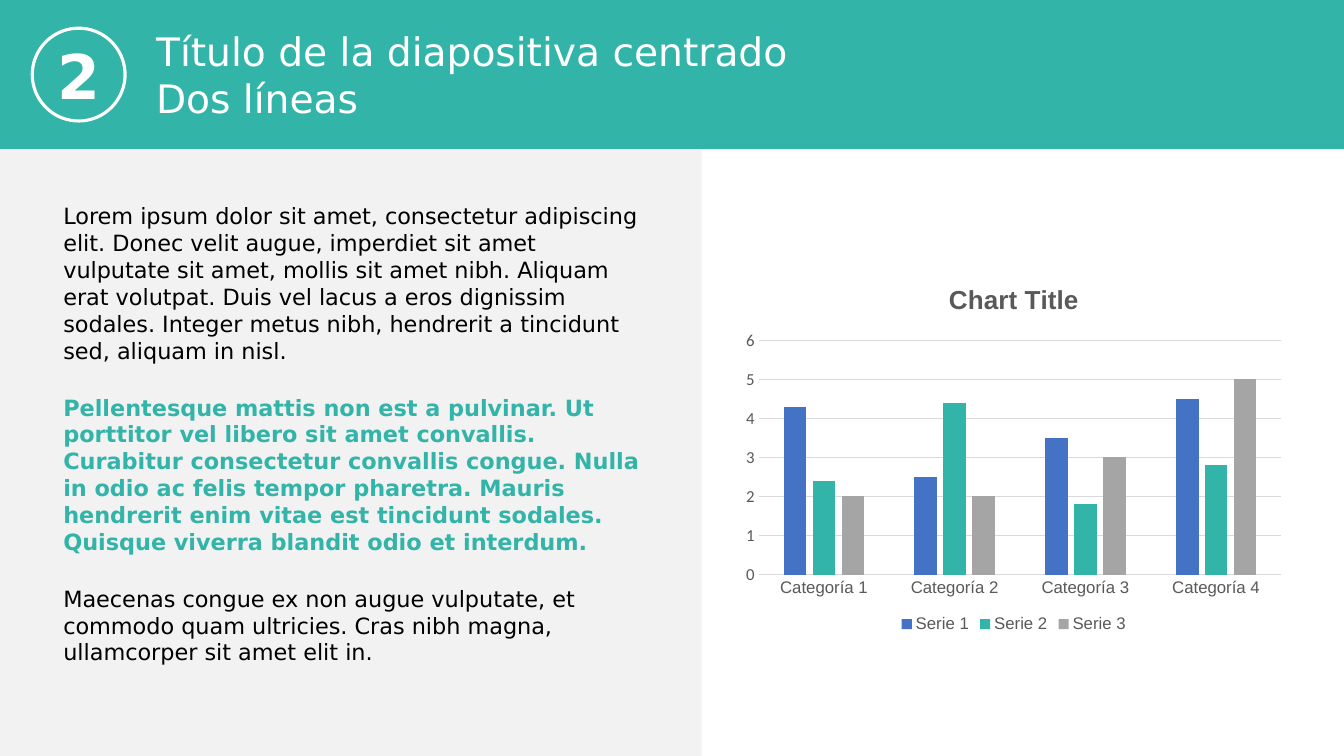
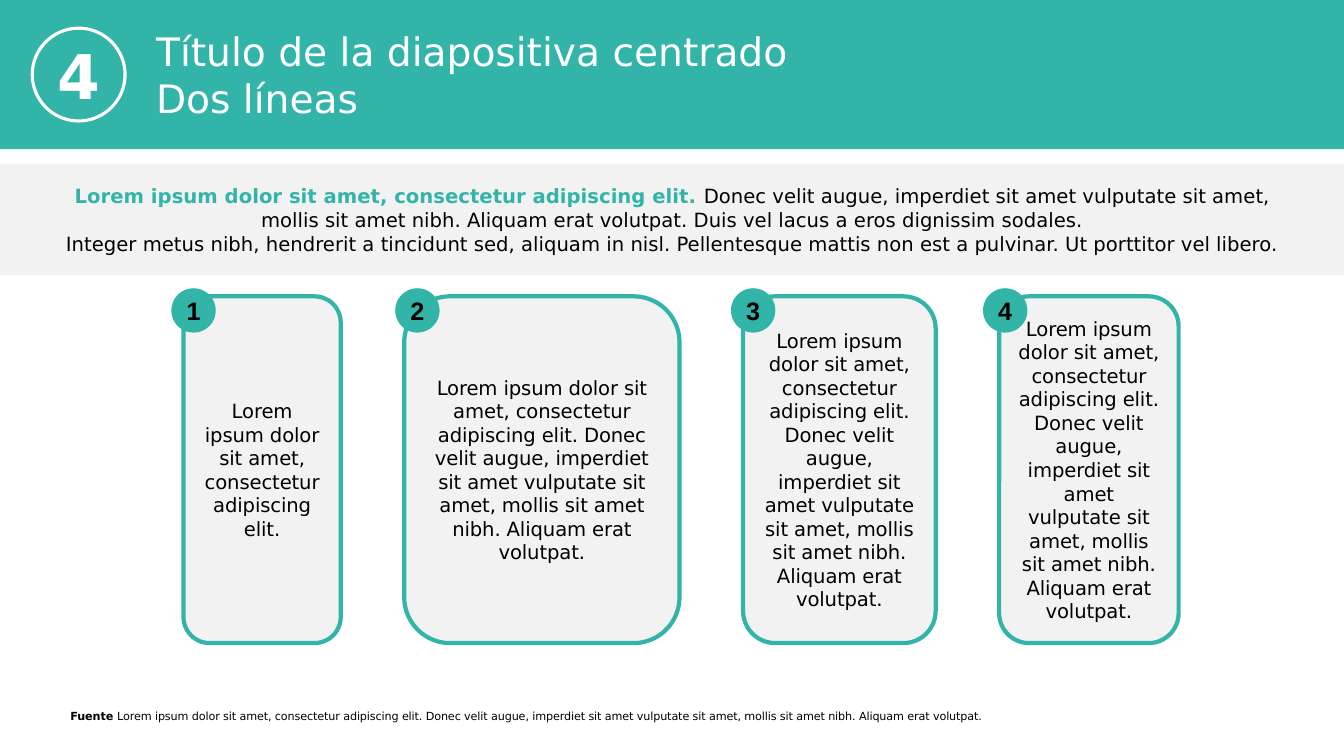
from dataclasses import dataclass, replace

import pptx
import pptx.chart.data
import pptx.dml.color
import pptx.enum.chart
import pptx.enum.shapes
import pptx.enum.text
import pptx.util
from pptx.util import Inches

SHAPES = pptx.enum.shapes.MSO_SHAPE
ALIGN = pptx.enum.text.PP_ALIGN
ANCHOR = pptx.enum.text.MSO_ANCHOR


@dataclass(frozen=True)
class TextStyle:
    size: float
    color: str = "000000"
    font: str = "DejaVu Sans"
    bold: bool = False
    spacing: int = 0


class Theme:
    teal = "32B4A8"
    pale = "F2F2F2"
    white = "FFFFFF"
    blue = "4472C4"
    gray = "A5A5A5"
    grid = "D9D9D9"
    title = TextStyle(28, white)
    section = TextStyle(44, white, bold=True)
    body = TextStyle(16)
    body_strong = replace(body, color=teal, bold=True)
    intro = TextStyle(14)
    intro_strong = replace(intro, color=teal, bold=True)
    card = replace(intro, spacing=-10)
    badge = TextStyle(18, font="Arial", bold=True)
    source = TextStyle(8, spacing=-10)
    source_strong = replace(source, bold=True)
    chart_title = TextStyle(18.6, "595959", "Arial", True)
    chart_label = TextStyle(12, "595959", "Arial")
    chart_value = replace(chart_label, font="Calibri")


def rgb(color):
    return pptx.dml.color.RGBColor.from_string(color)


def apply_font(font, style):
    font.size = pptx.util.Pt(style.size)
    font.name = style.font
    font.bold = style.bold
    font.color.rgb = rgb(style.color)


class Deck:
    def __init__(self):
        self.presentation = pptx.Presentation()
        self.presentation.slide_width = Inches(13.33)
        self.presentation.slide_height = Inches(7.5)
        self.slide = None

    def add_slide(self, number, title_lines):
        layout = self.presentation.slide_layouts[6]
        self.slide = self.presentation.slides.add_slide(layout)
        self.add_shape(SHAPES.RECTANGLE, (0, 0, 13.33, 1.48), Theme.teal)
        circle = self.add_shape(SHAPES.OVAL, (0.32, 0.28, 0.92, 0.92), line=Theme.white, width=2.25)
        self.center_text(circle, number, Theme.section)
        self.add_text((1.45, 0.17, 9.19, 1.04), [[(line, Theme.title)] for line in title_lines], inset=0.1)

    def add_shape(self, kind, box, fill=None, line=None, width=0):
        shape = self.slide.shapes.add_shape(kind, *map(Inches, box))
        shape.shadow.inherit = False
        if fill:
            shape.fill.solid()
            shape.fill.fore_color.rgb = rgb(fill)
        else:
            shape.fill.background()
        if line:
            shape.line.color.rgb = rgb(line)
            shape.line.width = pptx.util.Pt(width)
        else:
            shape.line.fill.background()
        return shape

    def fill_frame(self, frame, paragraphs, align=ALIGN.LEFT, gap=0):
        frame.word_wrap = True
        for index, runs in enumerate(paragraphs):
            paragraph = frame.add_paragraph() if index else frame.paragraphs[0]
            paragraph.alignment = align
            if index and gap:
                paragraph.space_before = pptx.util.Pt(gap)
            for text, style in runs:
                run = paragraph.add_run()
                run.text = text
                apply_font(run.font, style)
                if style.spacing:
                    run._r.get_or_add_rPr().set("spc", str(style.spacing))

    def set_inset(self, frame, inset):
        frame.margin_left = frame.margin_right = Inches(inset)
        frame.margin_top = frame.margin_bottom = Inches(inset)

    def center_text(self, shape, text, style, inset=0):
        frame = shape.text_frame
        self.set_inset(frame, inset)
        frame.vertical_anchor = ANCHOR.MIDDLE
        self.fill_frame(frame, [[(text, style)]], ALIGN.CENTER)

    def add_text(self, box, paragraphs, align=ALIGN.LEFT, gap=0, inset=None):
        frame = self.slide.shapes.add_textbox(*map(Inches, box)).text_frame
        if inset is not None:
            self.set_inset(frame, inset)
        self.fill_frame(frame, paragraphs, align, gap)

    def add_card(self, number, text, left, width, badge_left):
        card = self.add_shape(
            SHAPES.ROUNDED_RECTANGLE, (left, 2.94, width, 3.44), Theme.pale, Theme.teal, 3
        )
        self.center_text(card, text, Theme.card, 0.08)
        badge = self.add_shape(SHAPES.OVAL, (badge_left, 2.86, 0.44, 0.44), Theme.teal)
        self.center_text(badge, str(number), Theme.badge)

    def add_column_chart(self, box, title, categories, series):
        data = pptx.chart.data.CategoryChartData()
        data.categories = categories
        for name, values, _ in series:
            data.add_series(name, values)
        kind = pptx.enum.chart.XL_CHART_TYPE.COLUMN_CLUSTERED
        chart = self.slide.shapes.add_chart(kind, *map(Inches, box), data).chart
        apply_font(chart.font, Theme.chart_label)
        chart.has_title = True
        self.fill_frame(chart.chart_title.text_frame, [[(title, Theme.chart_title)]], ALIGN.CENTER)

        chart.has_legend = True
        chart.legend.position = pptx.enum.chart.XL_LEGEND_POSITION.BOTTOM
        chart.legend.include_in_layout = False
        apply_font(chart.legend.font, Theme.chart_label)

        plot = chart.plots[0]
        plot.gap_width = 219
        plot.overlap = -27
        plot.vary_by_categories = False
        for column, (_, _, color) in zip(plot.series, series):
            column.format.fill.solid()
            column.format.fill.fore_color.rgb = rgb(color)

        value_axis, category_axis = chart.value_axis, chart.category_axis
        for axis, style in ((value_axis, Theme.chart_value), (category_axis, Theme.chart_label)):
            axis.major_tick_mark = pptx.enum.chart.XL_TICK_MARK.NONE
            axis.minor_tick_mark = pptx.enum.chart.XL_TICK_MARK.NONE
            apply_font(axis.tick_labels.font, style)
        value_axis.minimum_scale = 0
        value_axis.maximum_scale = 6
        value_axis.major_unit = 1
        value_axis.has_major_gridlines = True
        value_axis.format.line.fill.background()
        for line in (value_axis.major_gridlines.format.line, category_axis.format.line):
            line.color.rgb = rgb(Theme.grid)
            line.width = pptx.util.Pt(0.75)


TITLE = ("Título de la diapositiva centrado", "Dos líneas")
OPENING = "Lorem ipsum dolor sit amet, consectetur adipiscing elit."
VELIT = "Donec velit augue, imperdiet sit amet vulputate sit amet, mollis sit amet nibh. Aliquam erat volutpat."
DUIS = "Duis vel lacus a eros dignissim sodales."
INTEGER = "Integer metus nibh, hendrerit a tincidunt sed, aliquam in nisl."


def build_chart_slide(deck):
    deck.add_slide("2", TITLE)
    deck.add_shape(SHAPES.RECTANGLE, (0, 1.48, 6.96, 6.02), Theme.pale)
    deck.add_text(
        (0.53, 1.96, 5.94, 4.86),
        [
            [(f"{OPENING} {VELIT} {DUIS} {INTEGER}", Theme.body)],
            [(
                "Pellentesque mattis non est a pulvinar. Ut porttitor vel libero sit amet convallis. "
                "Curabitur consectetur convallis congue. Nulla in odio ac felis tempor pharetra. "
                "Mauris hendrerit enim vitae est tincidunt sodales. "
                "Quisque viverra blandit odio et interdum.",
                Theme.body_strong,
            )],
            [(
                "Maecenas congue ex non augue vulputate, et commodo quam ultricies. "
                "Cras nibh magna, ullamcorper sit amet elit in.",
                Theme.body,
            )],
        ],
        gap=21.4,
    )
    deck.add_column_chart(
        (7.29, 2.63, 5.53, 3.69),
        "Chart Title",
        [f"Categoría {number}" for number in range(1, 5)],
        [
            ("Serie 1", (4.3, 2.5, 3.5, 4.5), Theme.blue),
            ("Serie 2", (2.4, 4.4, 1.8, 2.8), Theme.teal),
            ("Serie 3", (2, 2, 3, 5), Theme.gray),
        ],
    )


def build_cards_slide(deck):
    deck.add_slide("4", TITLE)
    deck.add_shape(SHAPES.RECTANGLE, (0, 1.63, 13.33, 1.1), Theme.pale)
    deck.add_text(
        (0.44, 1.78, 12.46, 0.81),
        [
            [(f"{OPENING} ", Theme.intro_strong), (f"{VELIT} {DUIS}", Theme.intro)],
            [(
                f"{INTEGER} Pellentesque mattis non est a pulvinar. Ut porttitor vel libero.",
                Theme.intro,
            )],
        ],
        ALIGN.CENTER,
    )
    full_text = f"{OPENING} {VELIT}"
    cards = (
        (OPENING, 1.56, 1.7),
        (full_text, 2.73, 3.92),
        (full_text, 1.91, 7.25),
        (full_text, 1.78, 9.75),
    )
    left, gap = 1.82, 0.63
    for number, (text, width, badge_left) in enumerate(cards, 1):
        deck.add_card(number, text, left, width, badge_left)
        left += width + gap
    deck.add_text(
        (0.6, 6.99, 9.75, 0.24),
        [[("Fuente ", Theme.source_strong), (full_text, Theme.source)]],
    )


def main():
    deck = Deck()
    build_chart_slide(deck)
    build_cards_slide(deck)
    deck.presentation.save("out.pptx")


if __name__ == "__main__":
    main()
